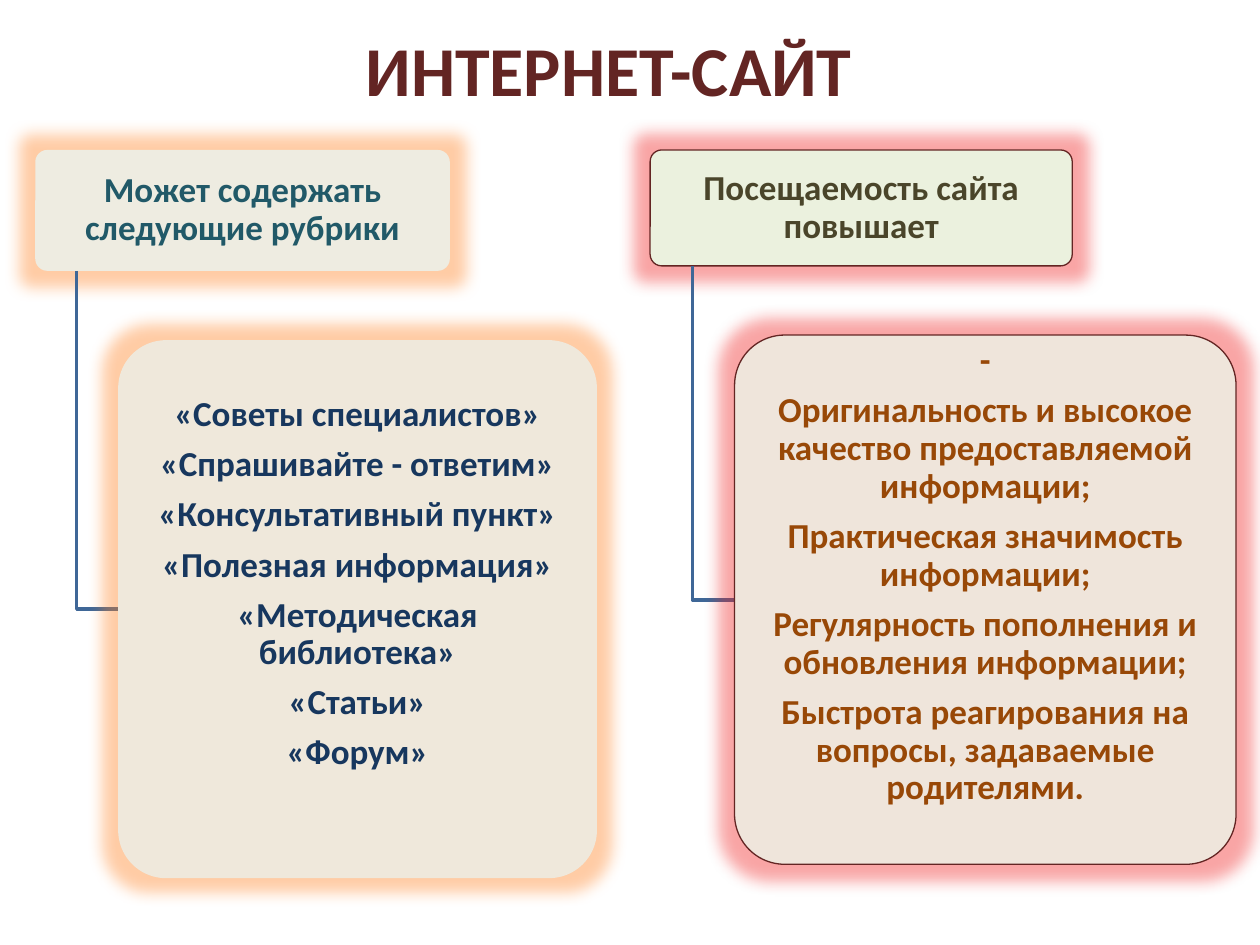
from lxml import etree
from pptx import Presentation, util as u
from pptx.dml.color import RGBColor
from pptx.enum import shapes, text
from pptx.oxml import ns

SLIDE_W, SLIDE_H = 10, 7.5
HEADING_TOP = 1.19
HEADING_GAP = 0.55
FONT = "Calibri"
COLORS = {
    "title": "632523", "branch": "3F6797", "outline": "632523",
    "cream": "EEECE1", "green": "EBF1DE",
    "teal": "215968", "navy": "17375E", "olive": "4A452A", "brown": "984807",
    "orange_glow": "FF8020", "red_glow": "F02020",
}
COLUMNS = [
    {
        "left": 0.28, "heading_size": (3.29, 0.96), "card_size": (3.8, 4.27),
        "heading_fill": "cream", "outline": None, "glow": "orange_glow",
        "heading_color": "teal", "card_color": "navy",
        "heading": "Может содержать следующие рубрики",
        "items": ["«Советы специалистов»", "«Спрашивайте - ответим»",
                  "«Консультативный пункт»", "«Полезная информация»",
                  "«Методическая библиотека»", "«Статьи»", "«Форум»"],
    },
    {
        "left": 5.16, "heading_size": (3.35, 0.92), "card_size": (3.98, 4.2),
        "heading_fill": "green", "outline": "outline", "glow": "red_glow",
        "heading_color": "olive", "card_color": "brown",
        "heading": "Посещаемость сайта повышает",
        "items": ["-",
                  "Оригинальность и высокое качество предоставляемой информации;",
                  "Практическая значимость информации;",
                  "Регулярность пополнения и обновления информации;",
                  "Быстрота реагирования на вопросы, задаваемые родителями."],
    },
]


def rgb(name):
    return RGBColor.from_string(COLORS[name])


def add_run(paragraph, words, size, color):
    paragraph.alignment = text.PP_ALIGN.CENTER
    run = paragraph.add_run()
    run.text = words
    run.font.name = FONT
    run.font.size = u.Pt(size)
    run.font.bold = True
    run.font.color.rgb = rgb(color)


def add_title(slide, words):
    title = slide.shapes.title
    title.left, title.top = u.Inches(0.58), u.Inches(0.16)
    title.width, title.height = u.Inches(SLIDE_W * 0.85), u.Inches(0.47)
    frame = title.text_frame
    frame.auto_size = text.MSO_AUTO_SIZE.NONE
    frame.vertical_anchor = text.MSO_ANCHOR.TOP
    add_run(frame.paragraphs[0], words, 40, "title")


def set_alpha(color_element, percent):
    etree.SubElement(color_element, ns.qn("a:alpha"), val=str(percent * 1000))


def add_glow(panel, color):
    panel.shadow.inherit = False
    effects = panel.element.spPr.find(ns.qn("a:effectLst"))
    glow = etree.SubElement(effects, ns.qn("a:glow"), rad=str(u.Pt(18)))
    tint = etree.SubElement(glow, ns.qn("a:srgbClr"), val=COLORS[color])
    set_alpha(tint, 40)


def add_panel(slide, box, fill, column, lines, color, opacity=100, bottom=0.03):
    panel = slide.shapes.add_shape(shapes.MSO_SHAPE.ROUNDED_RECTANGLE,
                                   *(u.Inches(side) for side in box))
    panel.adjustments[0] = 0.1
    panel.fill.solid()
    panel.fill.fore_color.rgb = rgb(fill)
    if opacity < 100:
        set_alpha(panel.element.spPr.find(".//" + ns.qn("a:srgbClr")), opacity)
    if column["outline"]:
        panel.line.color.rgb = rgb(column["outline"])
        panel.line.width = u.Pt(0.75)
    else:
        panel.line.fill.background()
    add_glow(panel, column["glow"])

    frame = panel.text_frame
    frame.word_wrap = True
    frame.vertical_anchor = text.MSO_ANCHOR.MIDDLE
    frame.margin_left = frame.margin_right = u.Inches(0.04)
    frame.margin_top, frame.margin_bottom = u.Inches(0.03), u.Inches(bottom)
    for index, words in enumerate(lines):
        paragraph = frame.add_paragraph() if index else frame.paragraphs[0]
        paragraph.line_spacing = 0.9
        paragraph.space_before = u.Pt(7 if index else 0)
        add_run(paragraph, words, 20, color)


def add_branch(slide, start, end):
    x1, y1, x2, y2 = (u.Inches(length) for length in (*start, *end))
    builder = slide.shapes.build_freeform(x1, y1)
    builder.add_line_segments([(x1, y2), (x2, y2)], close=False)
    branch = builder.convert_to_shape()
    branch.fill.background()
    branch.line.color.rgb = rgb("branch")
    branch.line.width = u.Pt(2)
    branch.shadow.inherit = False


def add_column(slide, column):
    left = column["left"]
    width, height = column["heading_size"]
    card_width, card_height = column["card_size"]
    heading_bottom = HEADING_TOP + height
    card_left = left + width * 0.2
    card_top = heading_bottom + HEADING_GAP

    add_panel(slide, (left, HEADING_TOP, width, height), column["heading_fill"],
              column, [column["heading"]], column["heading_color"])
    add_branch(slide, (left + width * 0.1, heading_bottom),
               (card_left, card_top + card_height / 2))
    add_panel(slide, (card_left, card_top, card_width, card_height), "cream",
              column, column["items"], column["card_color"],
              opacity=90, bottom=0.42)


def main():
    deck = Presentation()
    deck.slide_width, deck.slide_height = u.Inches(SLIDE_W), u.Inches(SLIDE_H)
    slide = deck.slides.add_slide(deck.slide_layouts[5])
    add_title(slide, "ИНТЕРНЕТ-САЙТ")
    for column in COLUMNS:
        add_column(slide, column)
    deck.save("out.pptx")


if __name__ == "__main__":
    main()
